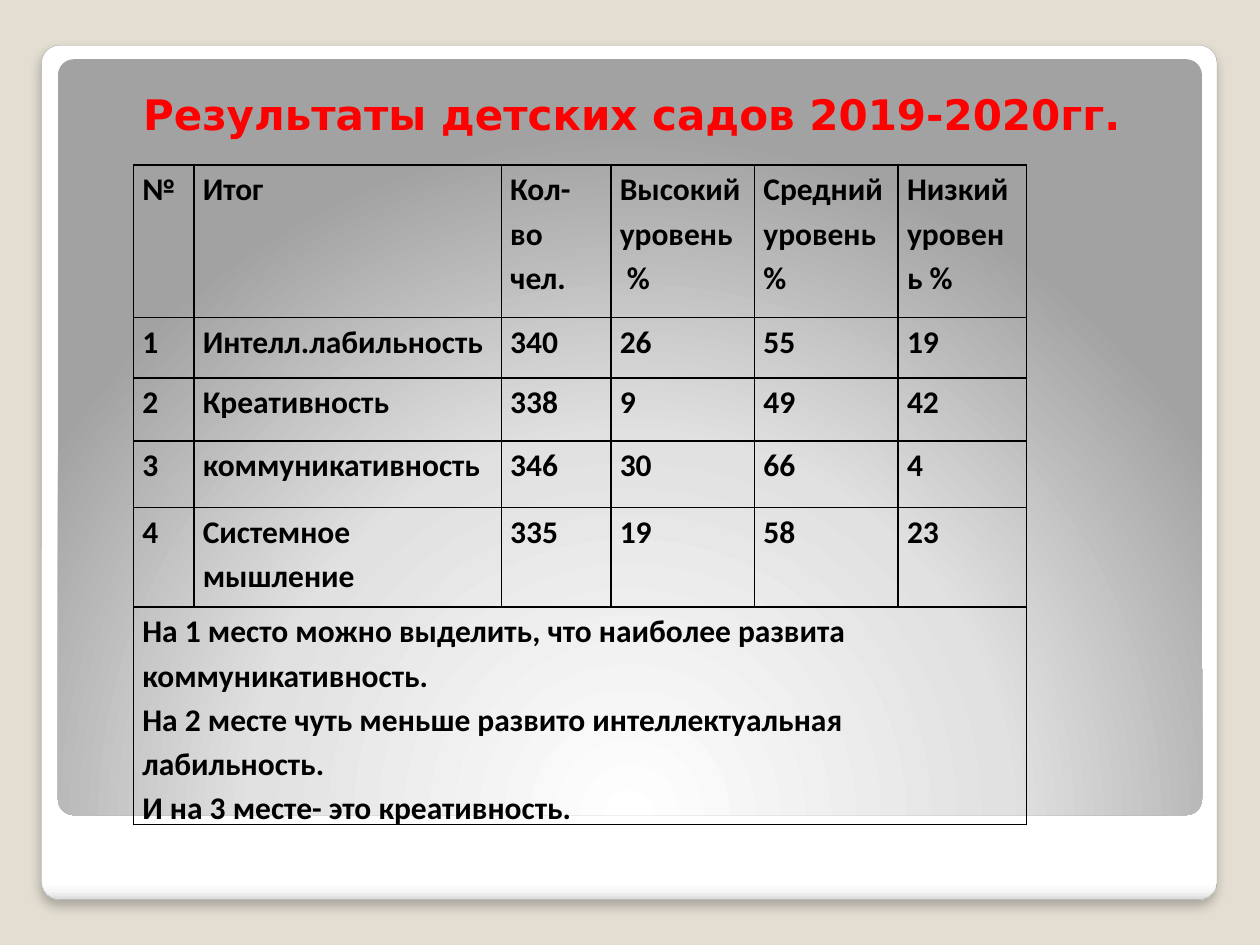
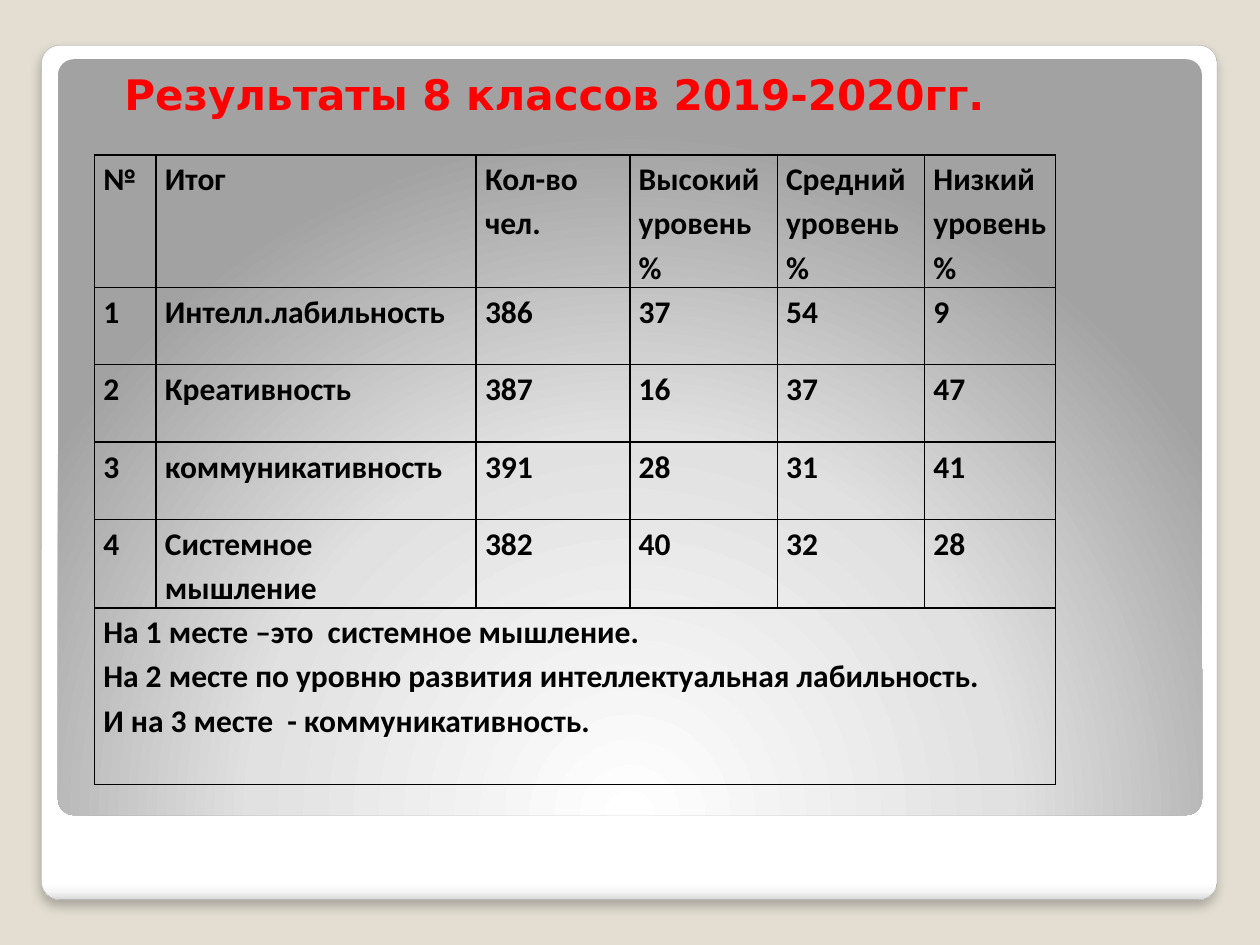
import lxml.etree
import pptx
import pptx.dml.color
import pptx.enum.shapes
import pptx.enum.text
import pptx.oxml
import pptx.oxml.ns
import pptx.util

COLORS = {
    "background": "E3DED1",
    "frame_line": "A4A4A4",
    "title": "FF0000",
    "ink": "000000",
    "white": "FFFFFF",
    "frame_shade": "F7F7F7",
    "frame_edge": "DADADA",
    "panel_middle": "E1E1E1",
    "panel_edge": "A2A2A2",
}
NAMESPACE = 'xmlns:a="http://schemas.openxmlformats.org/drawingml/2006/main"'
TITLE_FONT, TABLE_FONT = "DejaVu Sans", "Calibri"
GRID_COLUMNS, GRID_ROWS = 100, 75
FRAME_STOPS = [(0, "white"), (98, "white"), (99, "frame_shade"), (100, "frame_edge")]
PANEL_STOPS = [(0, "white"), (55, "panel_middle"), (100, "panel_edge")]
LINEAR_DOWN = '<a:lin ang="5400000" scaled="0"/>'
GLOW_FROM_BELOW = (
    '<a:path path="circle">'
    '<a:fillToRect l="50000" t="175000" r="50000" b="-75000"/></a:path>'
)
SHADOW = (
    f'<a:effectLst {NAMESPACE}><a:outerShdw blurRad="76200" dist="50800" dir="5400000" '
    f'algn="tl" rotWithShape="0"><a:srgbClr val="{COLORS["ink"]}">'
    '<a:alpha val="25000"/></a:srgbClr></a:outerShdw></a:effectLst>'
)
SKILLS = ["Интелл.лабильность", "Креативность", "коммуникативность", "Системное мышление"]

REPORTS = [
    {
        "title": "Результаты детских садов 2019-2020гг.",
        "title_box": (5, 3.5, 90.3, 8),
        "corner": (10.6, 13.1),
        "widths": [4.8, 24.4, 8.7, 11.4, 11.4, 10.2],
        "heights": [12.1, 4.8, 5, 5.3, 7.9, 16.1],
        "levels": ["Высокий\nуровень\n %", "Средний уровень %", "Низкий уровень %"],
        "scores": [(340, 26, 55, 19), (338, 9, 49, 42), (346, 30, 66, 4), (335, 19, 58, 23)],
        "conclusion": "На 1 место можно выделить, что наиболее развита  коммуникативность.\n"
                      "На 2 месте чуть меньше развито интеллектуальная лабильность.\n"
                      "И на 3 месте- это креативность.",
    },
    {
        "title": "Результаты 8 классов 2019-2020гг. ",
        "title_box": (5, 3.5, 79.2, 6.4),
        "corner": (7.5, 12.3),
        "widths": [4.9, 25.4, 12.2, 11.7, 11.7, 10.4],
        "heights": [10.5, 6.15, 6.15, 6.15, 7, 14],
        "levels": ["Высокий уровень %", "Средний уровень%", "Низкий  уровень%"],
        "scores": [(386, 37, 54, 9), (387, 16, 37, 47), (391, 28, 31, 41), (382, 40, 32, 28)],
        "conclusion": "На 1 месте –это  системное мышление.\n"
                      "На 2 месте по уровню развития интеллектуальная лабильность.\n"
                      "И на 3 месте  - коммуникативность.",
    },
]


class Deck:
    """Holds the shared style and the current slide, and draws each kind of element."""

    def __init__(self):
        self.presentation = pptx.Presentation()
        self.presentation.slide_width = pptx.util.Inches(10)
        self.presentation.slide_height = pptx.util.Inches(7.5)
        self.slide = None

    def across(self, columns):
        return round(self.presentation.slide_width * columns / GRID_COLUMNS)

    def down(self, rows):
        return round(self.presentation.slide_height * rows / GRID_ROWS)

    def place(self, left, top, width, height):
        return self.across(left), self.down(top), self.across(width), self.down(height)

    def color(self, name):
        return pptx.dml.color.RGBColor.from_string(COLORS[name])

    def style_paragraph(self, paragraph, font_name, size, color):
        font = paragraph.font
        font.name, font.size, font.bold = font_name, pptx.util.Pt(size), True
        font.color.rgb = self.color(color)

    def add_slide(self):
        self.slide = self.presentation.slides.add_slide(self.presentation.slide_layouts[6])
        fill = self.slide.background.fill
        fill.solid()
        fill.fore_color.rgb = self.color("background")
        frame = self.add_panel((3.3, 3.6, 93.3, 67.8), FRAME_STOPS, LINEAR_DOWN)
        frame.line.color.rgb = self.color("frame_line")
        frame.line.width = pptx.util.Pt(0.16)
        properties = frame._element.spPr
        properties.replace(properties.find(pptx.oxml.ns.qn("a:effectLst")),
                           pptx.oxml.parse_xml(SHADOW))
        self.add_panel((4.6, 4.7, 90.8, 60), PANEL_STOPS, GLOW_FROM_BELOW)

    def add_panel(self, box, stops, direction):
        shape = self.slide.shapes.add_shape(
            pptx.enum.shapes.MSO_SHAPE.ROUNDED_RECTANGLE, *self.place(*box))
        shape.adjustments[0] = 0.021
        shape.shadow.inherit = False
        shape.line.fill.background()
        stop_list = "".join(
            f'<a:gs pos="{share * 1000}"><a:srgbClr val="{COLORS[name]}"/></a:gs>'
            for share, name in stops)
        gradient = pptx.oxml.parse_xml(
            f'<a:gradFill {NAMESPACE} rotWithShape="1"><a:gsLst>{stop_list}</a:gsLst>'
            f'{direction}</a:gradFill>')
        shape._element.spPr.find(pptx.oxml.ns.qn("a:prstGeom")).addnext(gradient)
        return shape

    def add_title(self, text, box):
        frame = self.slide.shapes.add_textbox(*self.place(*box)).text_frame
        frame.word_wrap = True
        frame.vertical_anchor = pptx.enum.text.MSO_ANCHOR.BOTTOM
        paragraph = frame.paragraphs[0]
        paragraph.text = text
        paragraph.alignment = pptx.enum.text.PP_ALIGN.CENTER
        self.style_paragraph(paragraph, TITLE_FONT, 24, "title")

    def add_table(self, rows, corner, widths, heights):
        box = self.place(*corner, sum(widths), sum(heights))
        table = self.slide.shapes.add_table(len(heights), len(widths), *box).table
        table.first_row = table.horz_banding = False
        for column, width in zip(table.columns, widths):
            column.width = self.across(width)
        for row, height in zip(table.rows, heights):
            row.height = self.down(height)
        for cell in table.iter_cells():
            self.style_cell(cell)
        last_row = len(heights) - 1
        table.cell(last_row, 0).merge(table.cell(last_row, len(widths) - 1))
        for row_index, texts in enumerate(rows):
            for column_index, text in enumerate(texts):
                self.fill_cell(table.cell(row_index, column_index), str(text))

    def style_cell(self, cell):
        cell.margin_left = cell.margin_right = pptx.util.Inches(0.07)
        cell.margin_top = cell.margin_bottom = 0
        properties = cell._tc.get_or_add_tcPr()
        for side in "LRTB":
            properties.append(pptx.oxml.parse_xml(
                f'<a:ln{side} {NAMESPACE} w="12700"><a:solidFill>'
                f'<a:srgbClr val="{COLORS["ink"]}"/></a:solidFill></a:ln{side}>'))
        cell.fill.background()

    def fill_cell(self, cell, text):
        cell.text = text
        for paragraph in cell.text_frame.paragraphs:
            paragraph.line_spacing = 1.15
            self.style_paragraph(paragraph, TABLE_FONT, 18, "ink")


def main():
    deck = Deck()
    for report in REPORTS:
        deck.add_slide()
        deck.add_title(report["title"], report["title_box"])
        header = ["№", "Итог", "Кол-во чел.", *report["levels"]]
        results = [(number, skill, *scores) for number, (skill, scores)
                   in enumerate(zip(SKILLS, report["scores"]), start=1)]
        deck.add_table([header, *results, [report["conclusion"]]],
                       report["corner"], report["widths"], report["heights"])
    deck.presentation.save("out.pptx")


if __name__ == "__main__":
    main()
